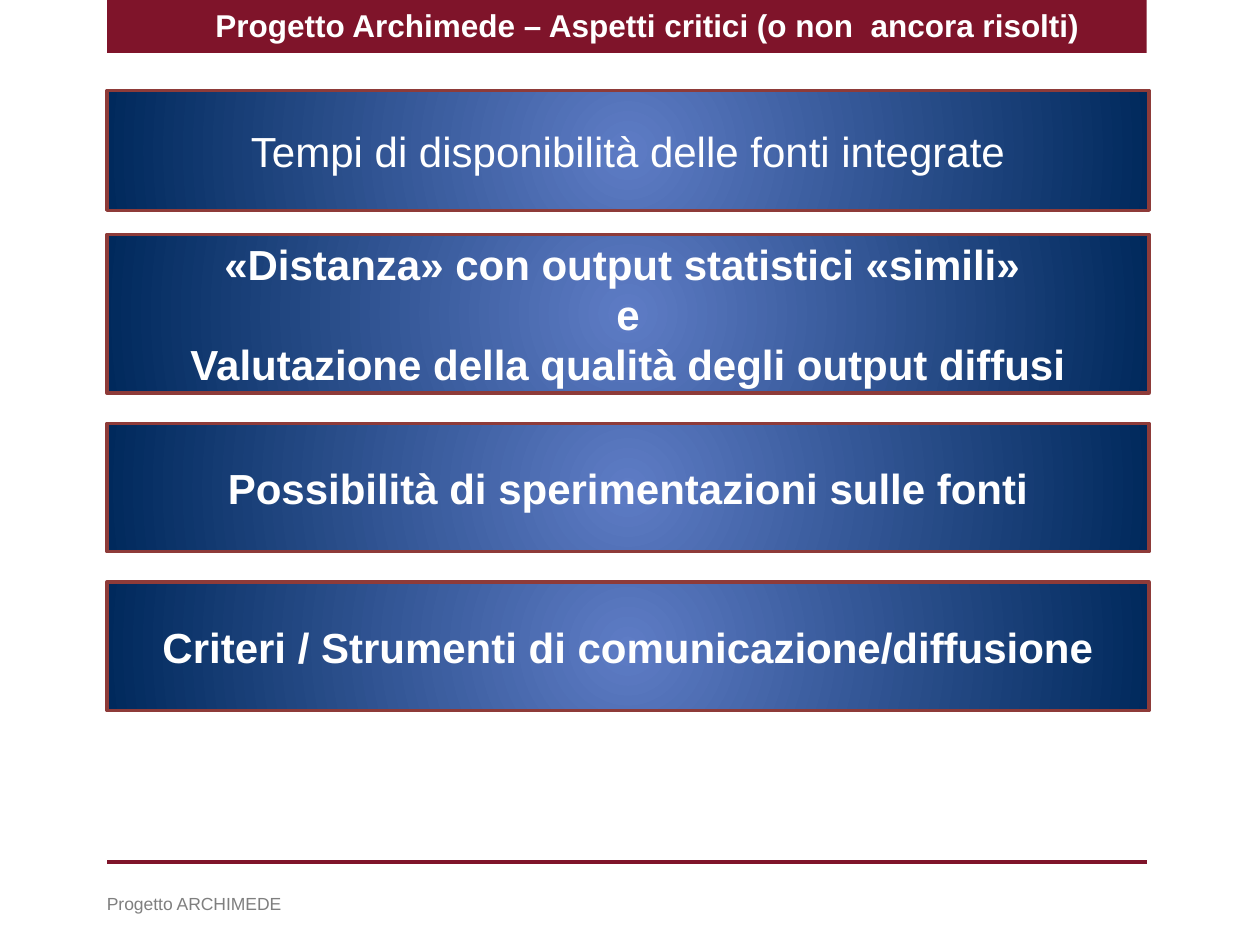
"""Build the slide on the critical aspects of Progetto Archimede."""
from pptx import Presentation
from pptx import util as u
from pptx.dml.color import RGBColor
from pptx.enum import shapes, text
from pptx.oxml import parse_xml
from pptx.oxml.ns import nsdecls, qn

Pt = u.Pt
COLORS = {"band": "7F142A", "center": "5E7CC5", "edge": "00295C",
          "border": "8E3B39", "white": "FFFFFF", "footer": "7F7F7F"}
LEFT, BAND_W, BOX_W = 61.2, 594, 595.4
BOXES = [
    (51.8, 68.4, False, ["Tempi di disponibilità delle fonti integrate"]),
    (133.9, 90.7, True, ["«Distanza» con output statistici «simili» ", "e",
                         "Valutazione della qualità degli output diffusi"]),
    (241.9, 73.4, True, ["Possibilità di sperimentazioni sulle fonti"]),
    (332.6, 73.4, True, ["Criteri / Strumenti di comunicazione/diffusione"]),
]


def rgb(name):
    return RGBColor.from_string(COLORS[name])


def write(tf, lines, size, color, bold, align):
    tf.text = "\n".join(lines)
    for p in tf.paragraphs:
        p.alignment = align
        p.font.name = "Arial"
        p.font.size = Pt(size)
        p.font.bold = bold
        p.font.color.rgb = rgb(color)


prs = Presentation()
prs.slide_width, prs.slide_height = Pt(720), Pt(540)
s = prs.slides.add_slide(prs.slide_layouts[5])

band = s.shapes.add_shape(shapes.MSO_SHAPE.RECTANGLE, Pt(LEFT), 0, Pt(BAND_W), Pt(30.2))
band.shadow.inherit = False
band.fill.solid()
band.fill.fore_color.rgb = rgb("band")
band.line.fill.background()

rule = s.shapes.add_connector(shapes.MSO_CONNECTOR.STRAIGHT, Pt(LEFT), Pt(492.5),
                              Pt(LEFT + BAND_W), Pt(492.5))
rule.line.color.rgb = rgb("band")
rule.line.width = Pt(2)
rule.element.spPr.append(parse_xml(f"<a:effectLst {nsdecls('a')}/>"))

title = s.shapes.title
s.shapes.element.append(title.element)
title.left, title.top, title.width, title.height = Pt(115.9), Pt(0), Pt(518.4), Pt(29)
tf = title.text_frame
tf.word_wrap = False
tf.auto_size = text.MSO_AUTO_SIZE.NONE
tf.vertical_anchor = text.MSO_ANCHOR.TOP
write(tf, ["Progetto Archimede – Aspetti critici (o non  ancora risolti)"],
      18, "white", True, text.PP_ALIGN.LEFT)

for top, height, bold, lines in BOXES:
    sp = s.shapes.add_shape(shapes.MSO_SHAPE.RECTANGLE, Pt(LEFT), Pt(top), Pt(BOX_W), Pt(height))
    sp.shadow.inherit = False
    sp.fill.gradient()
    for stop, name in zip(sp.fill.gradient_stops, ("center", "edge")):
        stop.color.rgb = rgb(name)
    lin = sp.element.spPr.find(".//" + qn("a:lin"))
    lin.getparent().replace(lin, parse_xml(
        f'<a:path {nsdecls("a")} path="circle">'
        '<a:fillToRect l="50000" t="50000" r="50000" b="50000"/></a:path>'))
    sp.line.color.rgb = rgb("border")
    sp.line.width = Pt(2)
    sp.text_frame.vertical_anchor = text.MSO_ANCHOR.MIDDLE
    write(sp.text_frame, lines, 24, "white", bold, text.PP_ALIGN.CENTER)

footer = s.shapes.add_textbox(Pt(54), Pt(506.9), Pt(369.4), Pt(19.4))
footer.text_frame.word_wrap = True
write(footer.text_frame, ["Progetto ARCHIMEDE"], 10, "footer", False, text.PP_ALIGN.LEFT)

prs.save("out.pptx")
